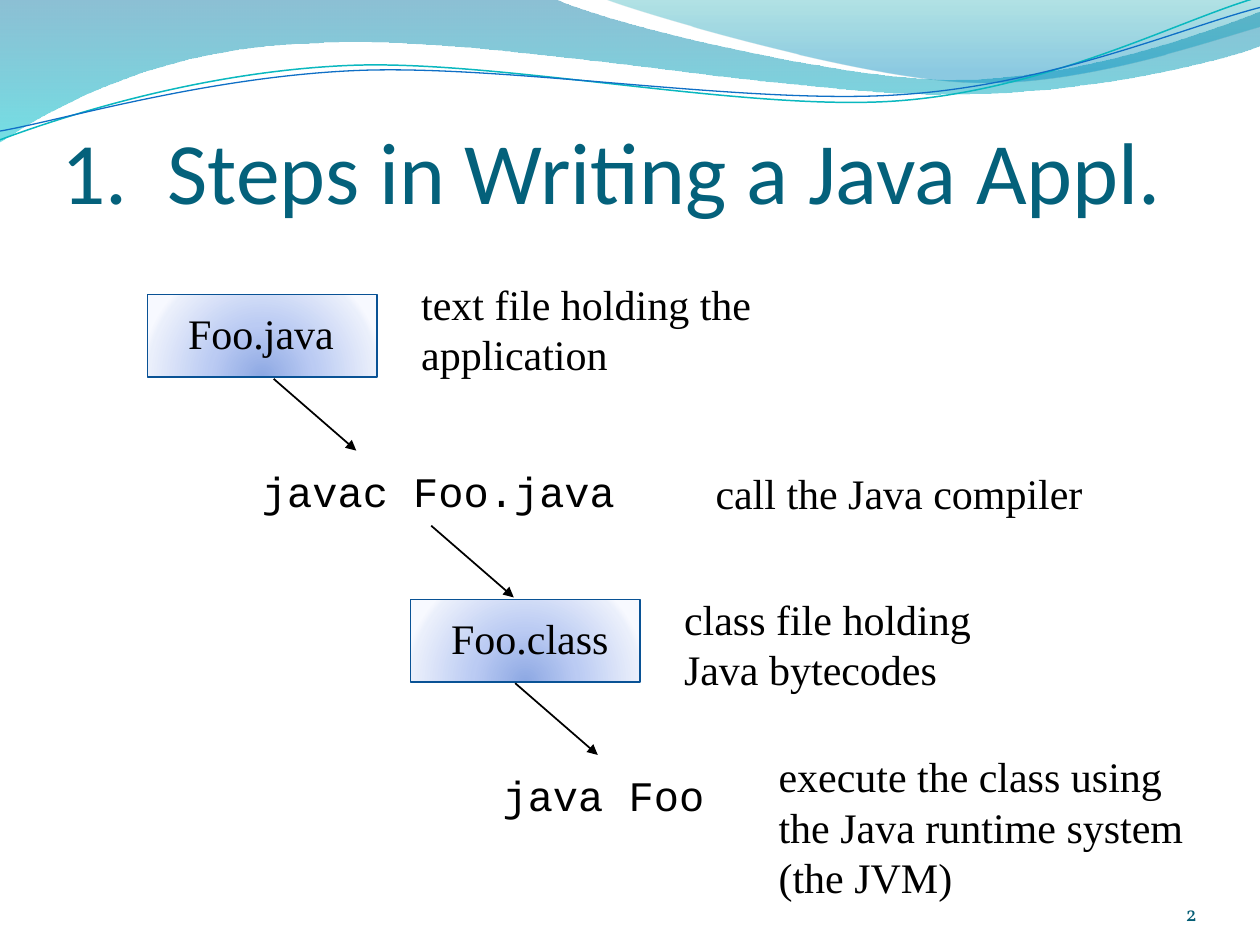
from math import cos, radians, sin

from lxml.etree import SubElement
from pptx import Presentation
from pptx.dml.color import RGBColor
from pptx.enum.shapes import MSO_CONNECTOR, MSO_SHAPE
from pptx.enum.text import MSO_ANCHOR, PP_ALIGN
from pptx.oxml import parse_xml
from pptx.oxml.ns import nsdecls, qn
from pptx.util import Pt

SERIF, MONO = "Times New Roman", "Courier New"
INSETS = (7.2, 3.6, 7.2, 3.6)

LINEAR = '<a:lin ang="5400000" scaled="0"/>'
RADIAL = ('<a:path path="circle"><a:fillToRect l="50000" t="130000" '
          'r="50000" b="-30000"/></a:path>')

# Each outline is a start point followed by lines (x, y) or curves (six numbers).
WAVES = [
    ([(0, 0), (316.8, -0.7),
      (342.7, 12.2, 478.1, 45.4, 545.8, 45.4),
      (614.2, 45.4, 689.8, 18.7, 720, 6.5), (720.7, 25.9),
      (707.8, 31.7, 626.4, 54.7, 537.1, 54),
      (447.8, 54, 275, 20.2, 185, 24.5),
      (92.9, 25.9, 33.1, 59.8, -0.7, 81.4), (0, 0)],
     [(0, "0074A1", 45), (100, "00C6CF", 55)]),
    ([(344.9, -0.7),
      (366.5, 7.9, 491, 44.6, 553.7, 46.8),
      (616.3, 49.7, 691.9, 23, 720, 15.1), (720, 0), (344.9, -0.7)],
     [(0, "00A1A9", 30), (80, "008BBF", 45)]),
]
WAVE_LINES = [
    ([(0, 79.9),
      (34.6, 67, 113.8, 41, 199.4, 37.4),
      (284.4, 33.8, 427, 64.1, 513.4, 57.6),
      (599.8, 51.1, 675.4, 10.8, 718.6, -1.4)], (359.3, 41.4), "0AB8BF", 0.85),
    ([(0, 74.9),
      (33.8, 69.1, 118.1, 43.9, 203.8, 40.3),
      (290.2, 36.7, 429.8, 60.5, 516.2, 54),
      (601.9, 48.2, 677.5, 15.1, 720, 4.3)], (359.6, 42.5), "0F6FC6", 0.75),
]
WAVE_TILT = -2.7

TITLE = "1.  Steps in Writing a Java Appl."
PAGE_NUMBER = "2"
FILES = [("Foo.java", 84.4, 168.5, 98.6), ("Foo.class", 234.7, 342.7, 105.1)]
FILE_SIZE = (131, 47)
FILE_STOPS = [(0, "8DA8E3", 100), (43, "BBCBF3", 100),
              (93, "EAEFFB", 100), (100, "F7F9FF", 100)]
COMMANDS = [("javac Foo.java", 142.6, 262.4, 216.7),
            ("java Foo", 280.1, 436.3, 130.3)]
NOTES = [
    ("text file holding the application", 233.6, 155.5, 283, 65.5),
    ("call the Java compiler", 401.8, 263.5, 276.5, 36.7),
    ("class file holding \nJava bytecodes", 383.8, 335.5, 283, 65.5),
    ("execute the class using\nthe Java runtime system\n(the JVM)",
     437.8, 425.5, 252.7, 94.3),
]
ARROW_STARTS = [(156.4, 216.5), (246.4, 300.4), (294.4, 390.4)]
ARROW_STEP = (47.2, 41)


def color(value):
    return RGBColor.from_string(value)


def turn(segment, center, degrees):
    cosine, sine = cos(radians(degrees)), sin(radians(degrees))
    turned = []
    for x, y in zip(segment[::2], segment[1::2]):
        dx, dy = x - center[0], y - center[1]
        turned += [center[0] + dx * cosine - dy * sine,
                   center[1] + dx * sine + dy * cosine]
    return turned


def add_outline(slide, segments, close):
    points = [(Pt(x), Pt(y)) for segment in segments
              for x, y in zip(segment[::2], segment[1::2])]
    builder = slide.shapes.build_freeform(*points[0])
    builder.add_line_segments(points[1:], close=close)
    shape = builder.convert_to_shape()
    shape.shadow.inherit = False
    steps = iter(list(shape.element.spPr.iter(qn("a:lnTo"))))
    for segment in segments[1:]:
        step = next(steps)
        if len(segment) == 6:
            step.tag = qn("a:cubicBezTo")
            for _ in range(2):
                extra = next(steps)
                step.append(extra[0])
                extra.getparent().remove(extra)
    return shape


def set_gradient(shape, stops, direction):
    marks = "".join(
        f'<a:gs pos="{position * 1000}"><a:srgbClr val="{value}">'
        f'<a:alpha val="{alpha * 1000}"/></a:srgbClr></a:gs>'
        for position, value, alpha in stops)
    gradient = parse_xml(f'<a:gradFill {nsdecls("a")} rotWithShape="1">'
                         f'<a:gsLst>{marks}</a:gsLst>{direction}</a:gradFill>')
    shape.fill.background()
    properties = shape.element.spPr
    properties.replace(properties.find(qn("a:noFill")), gradient)


def set_line(shape, value, width):
    shape.line.color.rgb = color(value)
    shape.line.width = Pt(width)


def add_text(slide, text, box, font, size, value="000000", wrap=True, insets=INSETS,
             anchor=MSO_ANCHOR.TOP, align=PP_ALIGN.LEFT):
    frame = slide.shapes.add_textbox(*map(Pt, box)).text_frame
    frame.word_wrap = wrap
    frame.vertical_anchor = anchor
    frame.margin_left, frame.margin_top, frame.margin_right, frame.margin_bottom = map(Pt, insets)
    paragraph = frame.paragraphs[0]
    paragraph.text = text
    paragraph.alignment = align
    for run in paragraph.runs:
        run.font.name = font
        run.font.size = Pt(size)
        run.font.color.rgb = color(value)


def add_file(slide, name, left, top, label_width):
    box = slide.shapes.add_shape(MSO_SHAPE.RECTANGLE, Pt(left), Pt(top), *map(Pt, FILE_SIZE))
    set_gradient(box, FILE_STOPS, RADIAL)
    set_line(box, "095295", 0.75)
    box.shadow.inherit = False
    add_text(slide, name, (left + 16, top + 3.6, label_width, 36.7), SERIF, 24, wrap=False)


def add_arrow(slide, x, y):
    arrow = slide.shapes.add_connector(MSO_CONNECTOR.STRAIGHT, Pt(x), Pt(y),
                                       Pt(x + ARROW_STEP[0]), Pt(y + ARROW_STEP[1]))
    set_line(arrow, "000000", 1)
    SubElement(arrow.element.spPr.find(qn("a:ln")), qn("a:tailEnd"), type="triangle")
    SubElement(arrow.element.spPr, qn("a:effectLst"))


def main():
    presentation = Presentation()
    presentation.slide_width, presentation.slide_height = Pt(720), Pt(540)
    slide = presentation.slides.add_slide(presentation.slide_layouts[6])

    for segments, stops in WAVES:
        wave = add_outline(slide, segments, True)
        set_gradient(wave, stops, LINEAR)
        wave.line.fill.background()
    for segments, center, value, width in WAVE_LINES:
        level = [turn(segment, center, -WAVE_TILT) for segment in segments]
        curve = add_outline(slide, level, False)
        curve.rotation = WAVE_TILT
        curve.fill.background()
        set_line(curve, value, width)

    add_text(slide, TITLE, (35.3, 36.7, 648, 90), "Calibri", 50, "04617B",
             insets=(0, 3.6, 0, 0), anchor=MSO_ANCHOR.BOTTOM)
    for file in FILES:
        add_file(slide, *file)
    for text, left, top, width in COMMANDS:
        add_text(slide, text, (left, top, width, 36.7), MONO, 24, wrap=False)
    for text, *box in NOTES:
        add_text(slide, text, box, SERIF, 24)
    for start in ARROW_STARTS:
        add_arrow(slide, *start)
    add_text(slide, PAGE_NUMBER, (624.2, 500.4, 59.8, 28.8), "Vollkorn", 12, "045D75",
             insets=(0, 0, 0, 0), anchor=MSO_ANCHOR.BOTTOM, align=PP_ALIGN.RIGHT)
    presentation.save("out.pptx")


if __name__ == "__main__":
    main()
